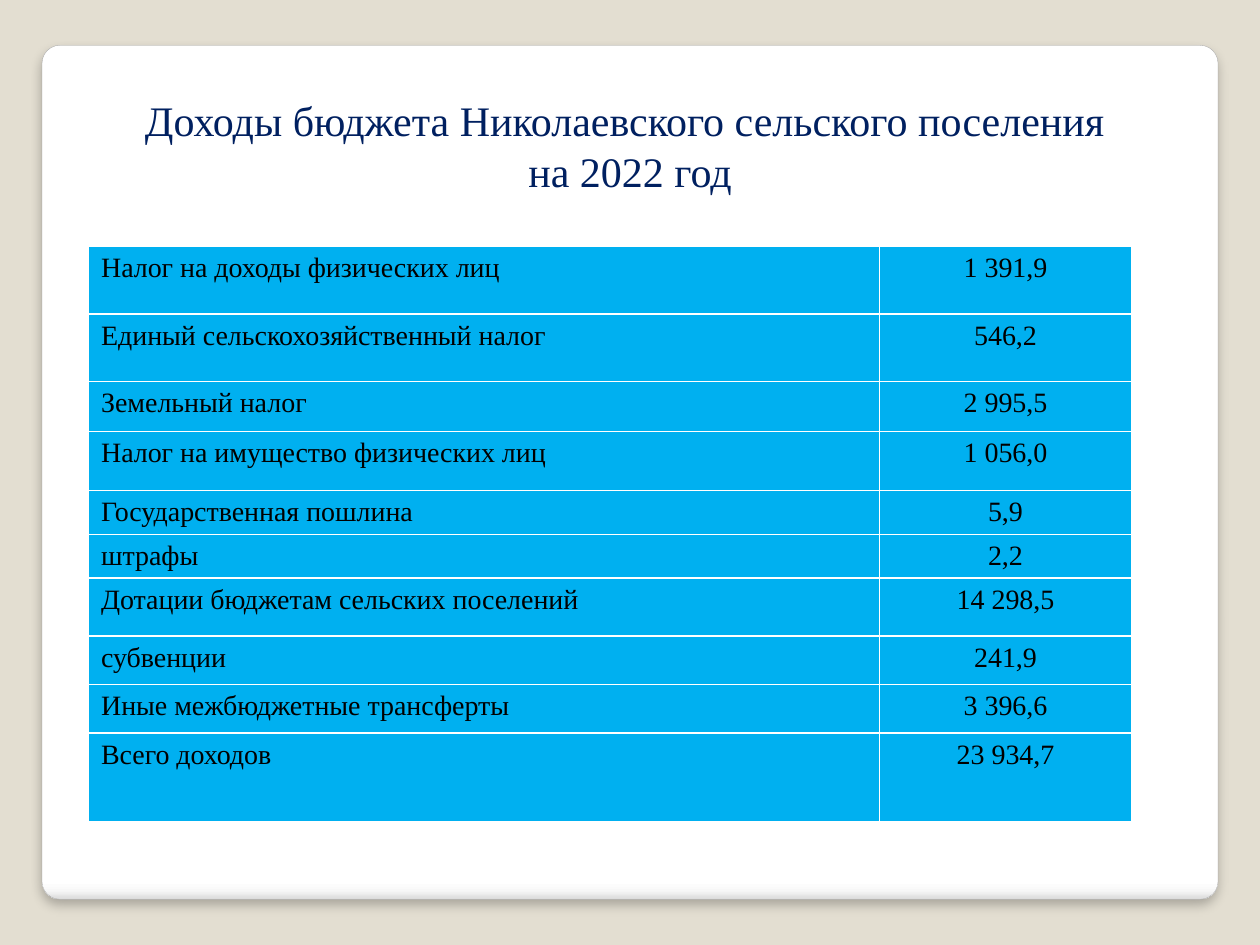
from lxml import etree
from pptx import Presentation
from pptx.dml.color import RGBColor
from pptx.enum import shapes, text
from pptx.oxml import parse_xml
from pptx.util import Pt

FONT = "Times New Roman"
DRAWING = "http://schemas.openxmlformats.org/drawingml/2006/main"


def color(value):
    return RGBColor.from_string(value)


def format_paragraph(paragraph, size, value, alignment):
    paragraph.alignment = alignment
    for run in paragraph.runs:
        run.font.name = FONT
        run.font.size = Pt(size)
        run.font.bold = False
        run.font.color.rgb = color(value)


presentation = Presentation()
presentation.slide_width, presentation.slide_height = Pt(720), Pt(540)
slide = presentation.slides.add_slide(presentation.slide_layouts[5])
slide.background.fill.solid()
slide.background.fill.fore_color.rgb = color("E3DED1")

title = slide.shapes.title
title.left, title.top, title.width, title.height = Pt(56), Pt(50.4), Pt(608), Pt(472)
frame = title.text_frame
frame.text = "Доходы бюджета Николаевского сельского поселения \nна 2022 год"
frame.word_wrap = True
frame.auto_size = text.MSO_AUTO_SIZE.NONE
frame.vertical_anchor = text.MSO_ANCHOR.TOP
for paragraph in frame.paragraphs:
    format_paragraph(paragraph, 24, "002060", text.PP_ALIGN.CENTER)
    paragraph.line_spacing = Pt(29)

card = slide.shapes.add_shape(
    shapes.MSO_SHAPE.ROUNDED_RECTANGLE, Pt(24), Pt(25.9), Pt(672), Pt(488))
card.adjustments[0] = 0.021
card.line.color.rgb = color("A4A4A4")
card.line.width = Pt(0.16)
card.fill.gradient()
card.fill.gradient_angle = 270
stops = card.element.spPr.find(f".//{{{DRAWING}}}gsLst")
for stop in list(stops):
    stops.remove(stop)
for position, value in [(0, "FFFFFF"), (98, "FFFFFF"), (99, "F7F7F7"), (100, "DADADA")]:
    stop = etree.SubElement(stops, f"{{{DRAWING}}}gs", pos=str(position * 1000))
    etree.SubElement(stop, f"{{{DRAWING}}}srgbClr", val=value)
card.element.spPr.append(parse_xml(
    f'<a:effectLst xmlns:a="{DRAWING}">'
    f'<a:outerShdw blurRad="{Pt(6)}" dist="{Pt(4)}" dir="5400000" algn="t" rotWithShape="0">'
    '<a:srgbClr val="000000"><a:alpha val="25000"/></a:srgbClr>'
    '</a:outerShdw></a:effectLst>'))
title.element.addprevious(card.element)

incomes = [
    ("Налог на доходы физических лиц", "1 391,9", 38.6),
    ("Единый сельскохозяйственный налог", "546,2", 38.6),
    ("Земельный налог", "2 995,5", 28.8),
    ("Налог на имущество физических лиц", "1 056,0", 33.7),
    ("Государственная пошлина", "5,9", 23),
    ("штрафы", "2,2", 25),
    ("Дотации бюджетам сельских поселений", "14 298,5", 33),
    ("субвенции", "241,9", 27.8),
    ("Иные межбюджетные трансферты", "3 396,6", 27.8),
    ("Всего доходов", "23 934,7", 50.4),
]
alignments = [text.PP_ALIGN.LEFT, text.PP_ALIGN.CENTER]
table_height = sum(height for _, _, height in incomes)
table = slide.shapes.add_table(
    len(incomes), 2, Pt(50.6), Pt(140.7), Pt(596), Pt(table_height)).table
table.columns[0].width, table.columns[1].width = Pt(452), Pt(144)
for row, (name, amount, height) in zip(table.rows, incomes):
    row.height = Pt(height)
    for cell, value, alignment in zip(row.cells, (name, amount), alignments):
        cell.text = value
        cell.fill.solid()
        cell.fill.fore_color.rgb = color("00B0F0")
        format_paragraph(cell.text_frame.paragraphs[0], 16, "000000", alignment)

presentation.save("out.pptx")
